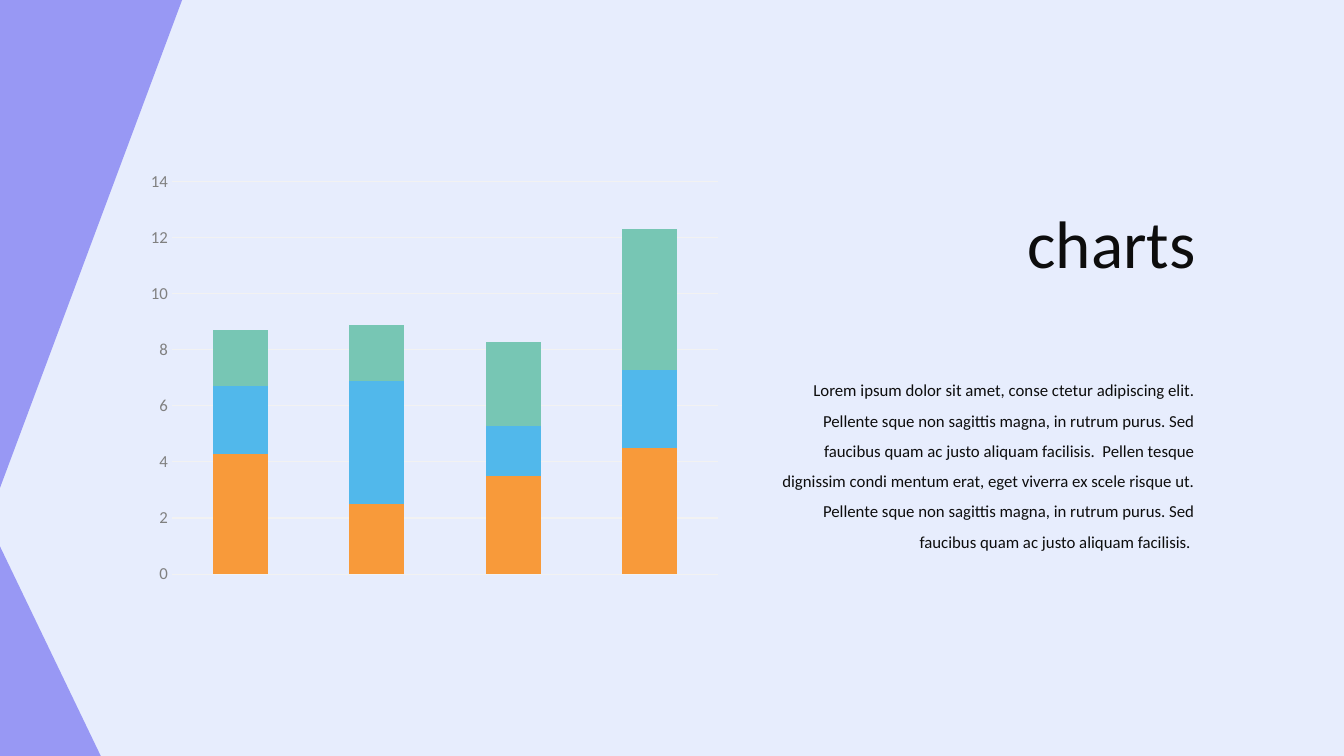
from pptx import Presentation
from pptx.chart.data import CategoryChartData
from pptx.dml.color import RGBColor
from pptx.enum.chart import XL_CHART_TYPE, XL_TICK_MARK
from pptx.enum.shapes import MSO_SHAPE
from pptx.enum.text import MSO_ANCHOR, MSO_AUTO_SIZE, PP_ALIGN
from pptx.oxml.ns import qn
from pptx.util import Inches, Pt
from lxml import etree

STACKED = XL_CHART_TYPE.COLUMN_STACKED
NO_TICK = XL_TICK_MARK.NONE
TRIANGLE = MSO_SHAPE.RIGHT_TRIANGLE
TOP = MSO_ANCHOR.TOP
FIXED = MSO_AUTO_SIZE.NONE
RIGHT = PP_ALIGN.RIGHT

THEME = {
    "font": "Calibri",
    "background": "E7EDFD",
    "triangle": "9898F4",
    "text": "0D0D0D",
    "axis": "808080",
    "grid": "F2F2F2",
    "title_size": 48,
    "body_size": 12,
    "axis_size": 12,
    "chart_size": 10,
}

TITLE = "charts"
BODY = (
    "Lorem ipsum dolor sit amet, conse ctetur adipiscing elit. "
    "Pellente sque non sagittis magna, in rutrum purus. "
    "Sed faucibus quam ac justo aliquam facilisis.  "
    "Pellen tesque dignissim condi mentum erat, eget viverra ex scele risque ut. "
    "Pellente sque non sagittis magna, in rutrum purus. "
    "Sed faucibus quam ac justo aliquam facilisis. "
)
CATEGORIES = ["1", "2", "3", "4"]
SERIES = [
    ("Series 1", (4.3, 2.5, 3.5, 4.5), "F89A3A"),
    ("Series 2", (2.4, 4.4, 1.8, 2.8), "51B8EB"),
    ("Series 3", (2, 2, 3, 5), "77C6B4"),
]
TRIANGLES = [
    ((0, 5.42, 1, 2.08), False),
    ((0, -0.01, 1.81, 4.85), True),
]
CHART_AREA = (1.38, 1.62, 5.86, 4.26)
TITLE_AREA = (8.67, 1.95, 3.29, 0.91)
BODY_AREA = (7.53, 3.62, 4.42, 1.89)


def color(name):
    return RGBColor.from_string(THEME.get(name, name))


def inches(area):
    return [Inches(value) for value in area]


def style_font(font, size, color_name):
    font.name = THEME["font"]
    font.size = Pt(THEME[size])
    font.color.rgb = color(color_name)


def add_triangle(slide, area, upside_down):
    triangle = slide.shapes.add_shape(TRIANGLE, *inches(area))
    triangle.shadow.inherit = False
    triangle.fill.solid()
    triangle.fill.fore_color.rgb = color("triangle")
    triangle.line.fill.background()
    if upside_down:
        triangle.element.spPr.find(qn("a:xfrm")).set("flipV", "1")


def fill_placeholder(box, area, text, size, line_spacing):
    box.left, box.top, box.width, box.height = inches(area)
    frame = box.text_frame
    frame.text = text
    frame.word_wrap = True
    frame.auto_size = FIXED
    frame.vertical_anchor = TOP
    para = frame.paragraphs[0]
    para.alignment = RIGHT
    para.line_spacing = line_spacing
    para.space_before = Pt(0)
    properties = para._p.get_or_add_pPr()
    properties.set("marL", "0")
    properties.set("indent", "0")
    etree.SubElement(properties, qn("a:buNone"))
    style_font(para.runs[0].font, size, "text")


def add_stacked_chart(slide):
    data = CategoryChartData()
    data.categories = CATEGORIES
    for name, values, _ in SERIES:
        data.add_series(name, values)
    chart = slide.shapes.add_chart(STACKED, *inches(CHART_AREA), data).chart
    chart.has_title = False
    chart.has_legend = False
    style_font(chart.font, "chart_size", "000000")

    plot = chart.plots[0]
    plot.gap_width = 150
    plot.overlap = 100
    plot.vary_by_categories = False
    for series, (_, _, fill) in zip(plot.series, SERIES):
        series.format.fill.solid()
        series.format.fill.fore_color.rgb = color(fill)

    chart.category_axis.visible = False
    axis = chart.value_axis
    axis.minimum_scale, axis.maximum_scale, axis.major_unit = 0, 14, 2
    axis.major_tick_mark = NO_TICK
    axis.minor_tick_mark = NO_TICK
    axis.format.line.fill.background()
    style_font(axis.tick_labels.font, "axis_size", "axis")
    grid = axis.major_gridlines.format.line
    grid.color.rgb = color("grid")
    grid.width = Pt(0.75)


def main():
    deck = Presentation()
    deck.slide_width, deck.slide_height = Inches(13.33), Inches(7.5)
    page = deck.slides.add_slide(deck.slide_layouts[1])
    page.background.fill.solid()
    page.background.fill.fore_color.rgb = color("background")
    for area, upside_down in TRIANGLES:
        add_triangle(page, area, upside_down)
    add_stacked_chart(page)
    fill_placeholder(page.shapes.title, TITLE_AREA, TITLE, "title_size", 1.0)
    fill_placeholder(page.placeholders[1], BODY_AREA, BODY, "body_size", 1.5)
    deck.save("out.pptx")


if __name__ == "__main__":
    main()
